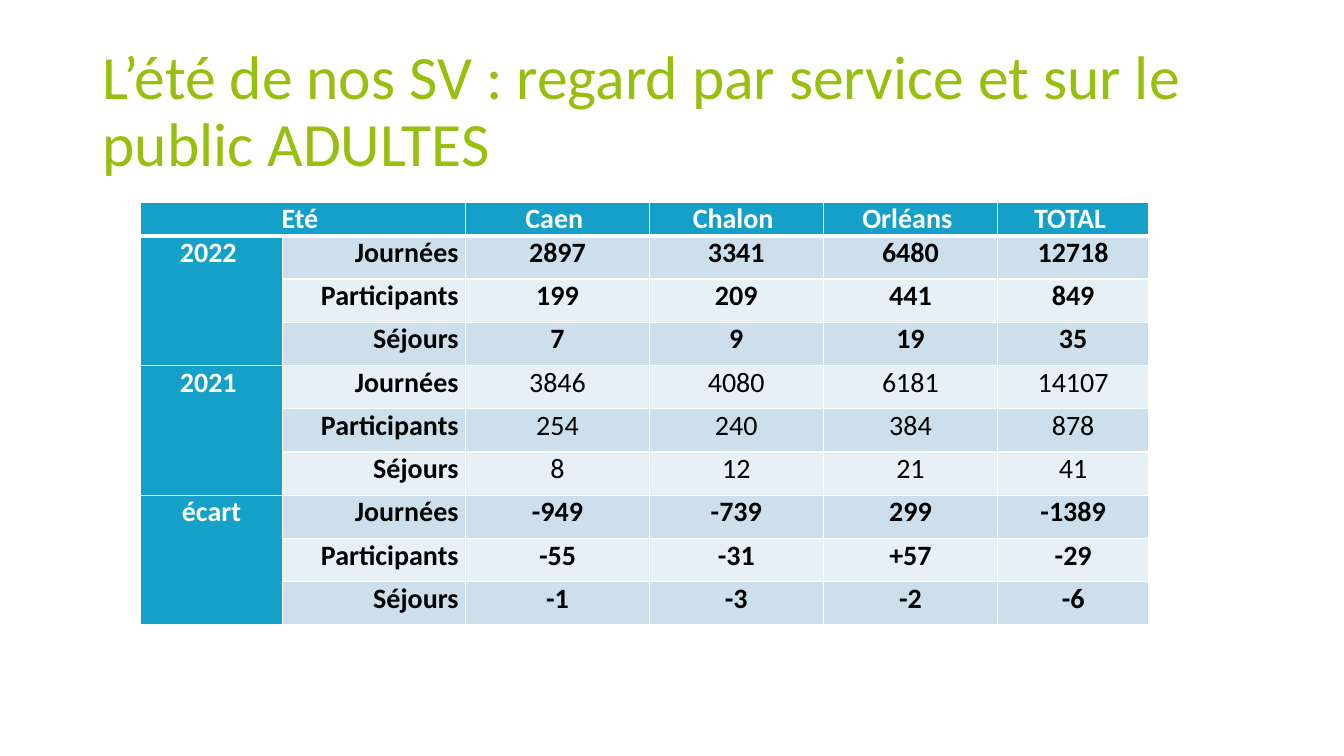
from lxml.etree import SubElement
from pptx import Presentation
from pptx.dml.color import RGBColor
from pptx.enum.text import MSO_ANCHOR, PP_ALIGN
from pptx.oxml.ns import qn
from pptx.util import Cm, Pt

GREEN = RGBColor(0x97, 0xBF, 0x0D)
BLUE = RGBColor(0x14, 0xA0, 0xC8)
BANDS = (RGBColor(0xCC, 0xDF, 0xEB), RGBColor(0xE7, 0xF0, 0xF5))
WHITE = RGBColor(0xFF, 0xFF, 0xFF)
BLACK = RGBColor(0, 0, 0)

HEADINGS = ("Eté ", None, "Caen ", "Chalon ", "Orléans ", "TOTAL ")
MEASURES = ("Journées", "Participants", "Séjours")
# Period, bold figures, one row of figures per measure
PERIODS = (
    ("2022 ", True, (("2897", "3341", "6480", "12718"),
                     ("199", "209", "441", "849"),
                     ("7", "9", "19", "35"))),
    ("2021 ", False, (("3846", "4080", "6181", "14107"),
                      ("254", "240", "384", "878"),
                      ("8", "12", "21", "41"))),
    ("écart", True, (("-949", "-739", "299", "-1389"),
                     ("-55", "-31", "+57", "-29"),
                     ("-1", "-3", "-2", "-6"))),
)
COLUMN_WIDTHS = (3.58, 4.62, 4.62, 4.39, 4.39, 3.81)
HEADER_HEIGHT, ROW_HEIGHT = 0.84, 1.09


class SlideBuilder:
    font_name = "Calibri"

    def __init__(self, slide):
        self.slide = slide

    def add_text(self, paragraph, text, size, color, bold=False):
        run = paragraph.add_run()
        run.text = text
        run.font.name = self.font_name
        run.font.size = Pt(size)
        run.font.bold = bold
        run.font.color.rgb = color

    def title(self, text, left, top, width, height):
        box = self.slide.shapes.add_textbox(Cm(left), Cm(top), Cm(width), Cm(height))
        frame = box.text_frame
        frame.word_wrap = True
        frame.vertical_anchor = MSO_ANCHOR.MIDDLE
        frame.paragraphs[0].line_spacing = 0.9
        self.add_text(frame.paragraphs[0], text, 44, GREEN)

    def table(self, left, top, widths, heights):
        table = self.slide.shapes.add_table(
            len(heights), len(widths), Cm(left), Cm(top),
            Cm(sum(widths)), Cm(sum(heights))).table
        for column, width in zip(table.columns, widths):
            column.width = Cm(width)
        for row, height in zip(table.rows, heights):
            row.height = Cm(height)
        return table

    def borders(self, cell, top=1, bottom=1):
        properties = cell._tc.get_or_add_tcPr()
        for side, points in (("L", 1), ("R", 1), ("T", top), ("B", bottom)):
            line = SubElement(properties, qn(f"a:ln{side}"), w=str(Pt(points)))
            fill = SubElement(line, qn("a:solidFill"))
            SubElement(fill, qn("a:srgbClr"), val=str(WHITE))

    def cell(self, cell, text, fill, color=BLACK, bold=True,
             align=PP_ALIGN.CENTER, top=1, bottom=1):
        self.borders(cell, top, bottom)
        cell.fill.solid()
        cell.fill.fore_color.rgb = fill
        cell.margin_left = cell.margin_right = Cm(0.18)
        cell.margin_top = cell.margin_bottom = 0
        if text:
            paragraph = cell.text_frame.paragraphs[0]
            paragraph.alignment = align
            self.add_text(paragraph, text, 20, color, bold)


def main():
    prs = Presentation()
    prs.slide_width, prs.slide_height = Cm(33.87), Cm(19.05)
    builder = SlideBuilder(prs.slides.add_slide(prs.slide_layouts[6]))

    builder.title("L’été de nos SV : regard par service et sur le public ADULTES",
                  2.33, 1.01, 30.23, 3.68)

    # Table header
    row_count = len(PERIODS) * len(MEASURES)
    summer = builder.table(3.54, 5.09, COLUMN_WIDTHS,
                           [HEADER_HEIGHT] + [ROW_HEIGHT] * row_count)
    for column, heading in enumerate(HEADINGS):
        builder.cell(summer.cell(0, column), heading, BLUE, WHITE, bottom=3)
    summer.cell(0, 0).merge(summer.cell(0, 1))

    # Three measures for each period
    for block, (period, bold, figures) in enumerate(PERIODS):
        first = 1 + block * len(MEASURES)
        for offset, (measure, values) in enumerate(zip(MEASURES, figures)):
            row = first + offset
            band = BANDS[(row - 1) % 2]
            top = 3 if row == 1 else 1
            builder.cell(summer.cell(row, 0), None if offset else period,
                         BLUE, WHITE, top=top)
            builder.cell(summer.cell(row, 1), measure, band,
                         align=PP_ALIGN.RIGHT, top=top)
            for column, value in enumerate(values, 2):
                builder.cell(summer.cell(row, column), value, band,
                             bold=bold, top=top)
        summer.cell(first, 0).merge(summer.cell(first + len(MEASURES) - 1, 0))

    prs.save("out.pptx")


if __name__ == "__main__":
    main()
